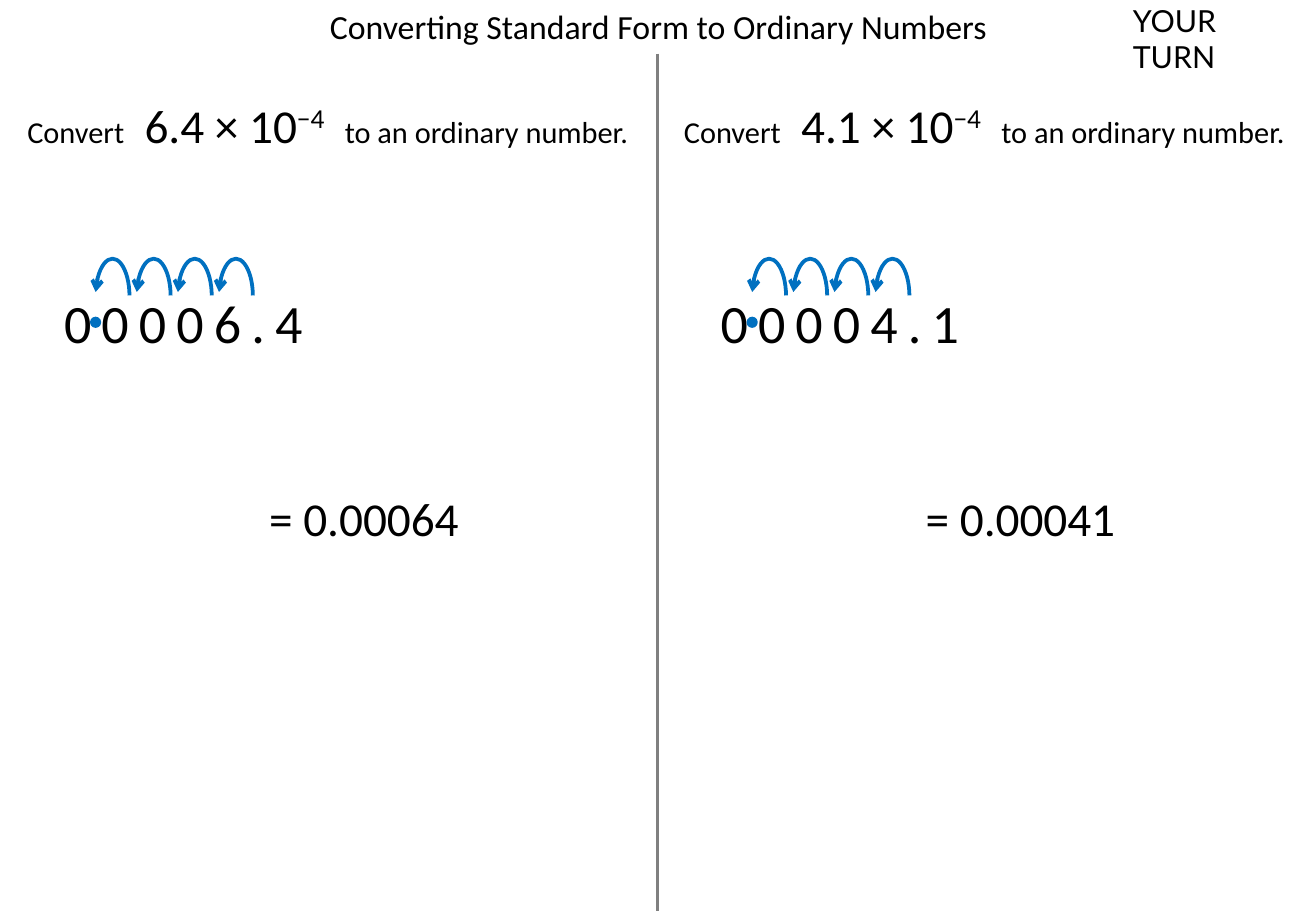
from lxml import etree
from pptx import Presentation, util as u
from pptx.dml.color import RGBColor
from pptx.enum import shapes, text
from pptx.oxml.ns import qn

TITLE = "Converting Standard Form to Ordinary Numbers"
TURN_LABEL = "YOUR TURN"
EXAMPLES = [
    {"mantissa": "6.4", "digits": "00006.4", "answer": "= 0.00064"},
    {"mantissa": "4.1", "digits": "00004.1", "answer": "= 0.00041"},
]
POWER = "−4"
HOPS = 4
BLACK, BLUE, GREY = "000000", "0070C0", "808080"

COLUMN_STEP = 13.73
HOP_LEFT, HOP_STEP = 2.0, 0.86
ARC_ANGLES = (109.544, 207.557)


def box(left, top, width, height):
    return [u.Cm(value) for value in (left, top, width, height)]


def paint(color_format, color):
    color_format.rgb = RGBColor.from_string(color)


def add_text(place, runs, size, font="Calibri", align=text.PP_ALIGN.CENTER):
    shape = slide.shapes.add_textbox(*box(*place))
    frame = shape.text_frame
    frame.word_wrap = True
    frame.auto_size = text.MSO_AUTO_SIZE.SHAPE_TO_FIT_TEXT
    paragraph = frame.paragraphs[0]
    paragraph.alignment = align
    paragraph.font.name = font
    paragraph.font.size = u.Pt(size)
    paint(paragraph.font.color, BLACK)
    for words, options in runs:
        run = paragraph.add_run()
        run.text = words
        if "size" in options:
            run.font.size = u.Pt(options["size"])
        properties = run._r.get_or_add_rPr()
        for name in ("baseline", "spc"):
            if name in options:
                properties.set(name, str(options[name]))


def add_outline(kind, place, width):
    shape = slide.shapes.add_shape(kind, *box(*place))
    shape.shadow.inherit = False
    paint(shape.line.color, BLUE)
    shape.line.width = u.Pt(width)
    return shape


def add_hop(left):
    arc = add_outline(shapes.MSO_SHAPE.ARC, (left, 5.41, 0.71, 1.57), 2.25)
    arc.fill.background()
    for index, angle in enumerate(ARC_ANGLES):
        arc.adjustments[index] = angle
    arc._element.spPr.find(qn("a:xfrm")).set("flipH", "1")
    etree.SubElement(arc.line._get_or_add_ln(), qn("a:tailEnd"), type="arrow")


def add_example(example, left):
    gap = (" ", {"spc": 800})
    question = [
        ("Convert", {}),
        gap,
        (example["mantissa"] + " × 10", {"size": 28}),
        (POWER, {"size": 28, "baseline": 30000}),
        gap,
        ("to an ordinary number.", {}),
    ]
    add_text((left - 0.46, 1.88, 14.63, 1.45), question, 18)
    add_text((left + 1.09, 5.92, 5.77, 1.63), [(example["digits"], {"spc": 600})], 32,
             align=text.PP_ALIGN.LEFT)
    point = add_outline(shapes.MSO_SHAPE.OVAL, (left + 1.91, 6.65, 0.18, 0.18), 1.5)
    point.fill.solid()
    paint(point.fill.fore_color, BLUE)
    for hop in range(HOPS):
        add_hop(left + HOP_LEFT + hop * HOP_STEP)
    add_text((left + 5.36, 10.11, 4.5, 1.45), [(example["answer"], {})], 28)


presentation = Presentation()
presentation.slide_width, presentation.slide_height = u.Cm(27.52), u.Cm(19.05)
slide = presentation.slides.add_slide(presentation.slide_layouts[6])

divider = slide.shapes.add_connector(
    shapes.MSO_CONNECTOR.STRAIGHT, *box(13.75, 1.12, 13.75, 19.05))
paint(divider.line.color, GREY)
divider.line.width = u.Pt(2.25)
etree.SubElement(divider._element.spPr, qn("a:effectLst"))

for column, example in enumerate(EXAMPLES):
    add_example(example, column * COLUMN_STEP)

add_text((23.44, -0.08, 4.04, 1.02), [(TURN_LABEL, {})], 18, "Lato", text.PP_ALIGN.LEFT)
add_text((6.58, 0, 14.38, 1.12), [(TITLE, {})], 20)

presentation.save("out.pptx")
